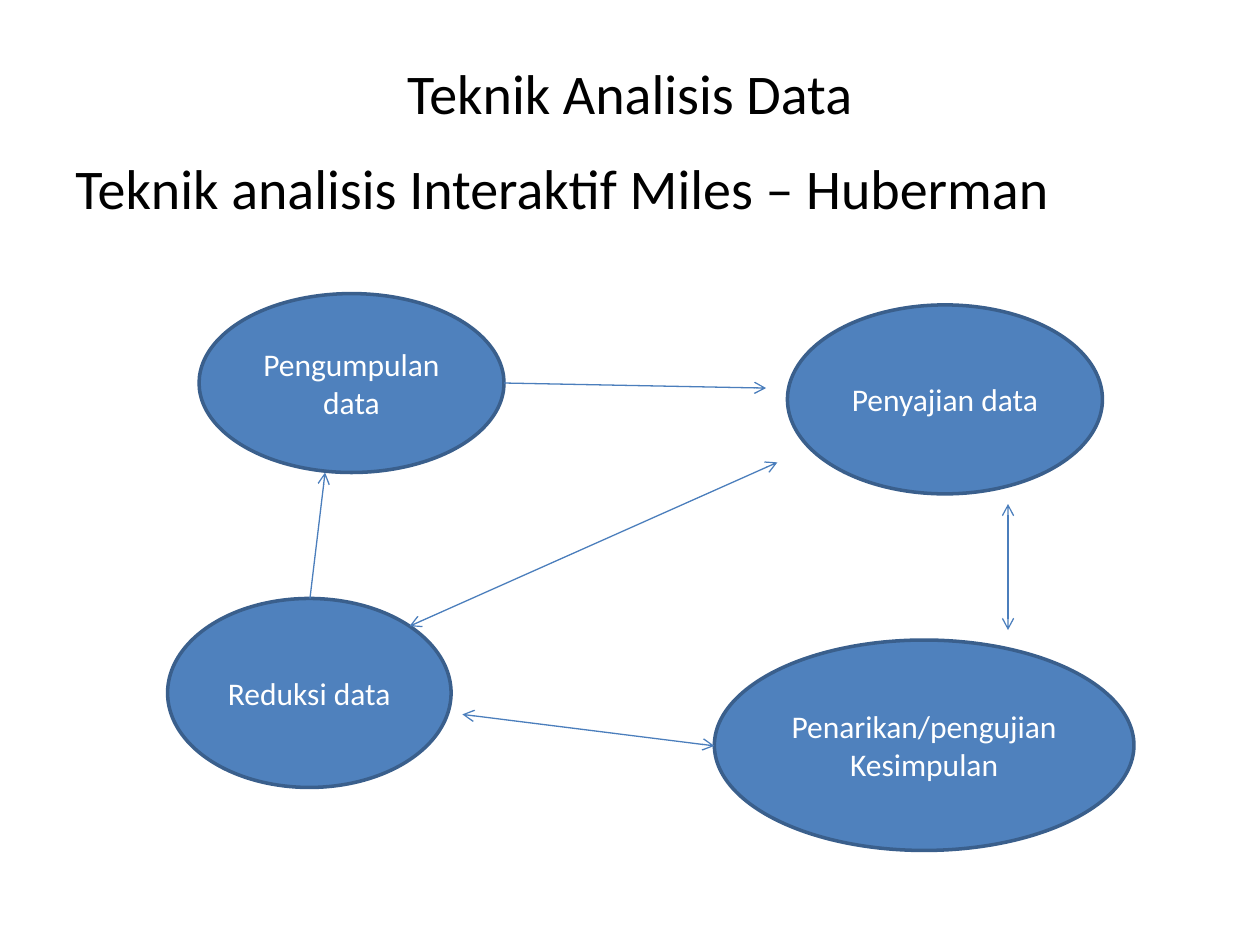
from lxml.etree import SubElement
from pptx import Presentation
from pptx.dml.color import RGBColor
from pptx.enum.shapes import MSO_CONNECTOR as CONN, MSO_SHAPE as SHAPE
from pptx.enum.text import MSO_ANCHOR as ANCHOR, PP_ALIGN as ALIGN
from pptx.oxml.ns import qn
from pptx.util import Inches, Pt

NODES = [
    ("Pengumpulan data", 0.25, 0, 2.42, 1.42),
    ("Penyajian data", 4.92, 0.09, 2.5, 1.5),
    ("Penarikan/pengujian Kesimpulan", 4.34, 2.75, 3.33, 1.67),
    ("Reduksi data", 0, 2.42, 2.25, 1.5),
]
ARROWS = [
    (2.67, 0.71, 4.75, 0.75, False),
    (6.67, 1.67, 6.67, 2.67, True),
    (2.34, 3.34, 4.34, 3.59, True),
    (1.92, 2.64, 4.84, 1.34, True),
    (1.13, 2.42, 1.25, 1.42, False),
]


def rgb(code):
    """Turn a hex string into a colour."""
    return RGBColor.from_string(code)


def write(sp, text, size=18, color="000000", align=ALIGN.CENTER,
          anchor=ANCHOR.MIDDLE, hanging=0):
    """Put one formatted paragraph into a shape."""
    tf = sp.text_frame
    tf.word_wrap = True
    tf.vertical_anchor = anchor
    p = tf.paragraphs[0]
    p.alignment = align
    if hanging:
        pPr = p._p.get_or_add_pPr()
        pPr.set("marL", str(Inches(hanging)))
        pPr.set("indent", str(-Inches(hanging)))
    r = p.add_run()
    r.text = text
    r.font.name = "Calibri"
    r.font.size = Pt(size)
    r.font.color.rgb = rgb(color)


def add_heading(s, x, y, w, h, text, **fmt):
    """Add a large line of text in the given box."""
    sp = s.shapes.add_textbox(Inches(x), Inches(y), Inches(w), Inches(h))
    write(sp, text, size=32, **fmt)


def add_node(s, x, y, w, h, text):
    """Add a labelled ellipse."""
    sp = s.shapes.add_shape(SHAPE.OVAL, Inches(x), Inches(y), Inches(w), Inches(h))
    sp.shadow.inherit = False
    sp.fill.solid()
    sp.fill.fore_color.rgb = rgb("4F81BD")
    sp.line.color.rgb = rgb("3A5F8C")
    sp.line.width = Pt(2)
    write(sp, text, color="FFFFFF")


def add_arrow(s, x1, y1, x2, y2, both):
    """Add an arrow, with a head at each end if both is true."""
    c = s.shapes.add_connector(CONN.STRAIGHT, Inches(x1), Inches(y1),
                               Inches(x2), Inches(y2))
    c.line.color.rgb = rgb("4B7EBC")
    c.line.width = Pt(0.75)
    ln = c.line._get_or_add_ln()
    for tag in ("a:headEnd", "a:tailEnd") if both else ("a:tailEnd",):
        SubElement(ln, qn(tag), type="arrow")
    SubElement(c._element.spPr, qn("a:effectLst"))


def add_cycle(s, x, y):
    """Add the interactive analysis diagram from its top left corner."""
    for text, dx, dy, w, h in NODES:
        add_node(s, x + dx, y + dy, w, h, text)
    for x1, y1, x2, y2, both in ARROWS:
        add_arrow(s, x + x1, y + y1, x + x2, y + y2, both)


def main():
    """Build and save the slide."""
    prs = Presentation()
    prs.slide_width, prs.slide_height = Inches(10), Inches(7.5)
    s = prs.slides.add_slide(prs.slide_layouts[6])
    add_heading(s, 0.5, 0.3, 9, 0.87, "Teknik Analisis Data")
    add_heading(s, 0.5, 1.17, 9, 5.53, "Teknik analisis Interaktif Miles – Huberman",
                align=ALIGN.JUSTIFY, anchor=ANCHOR.TOP, hanging=0.38)
    add_cycle(s, 1.33, 2.33)
    prs.save("out.pptx")


if __name__ == "__main__":
    main()
